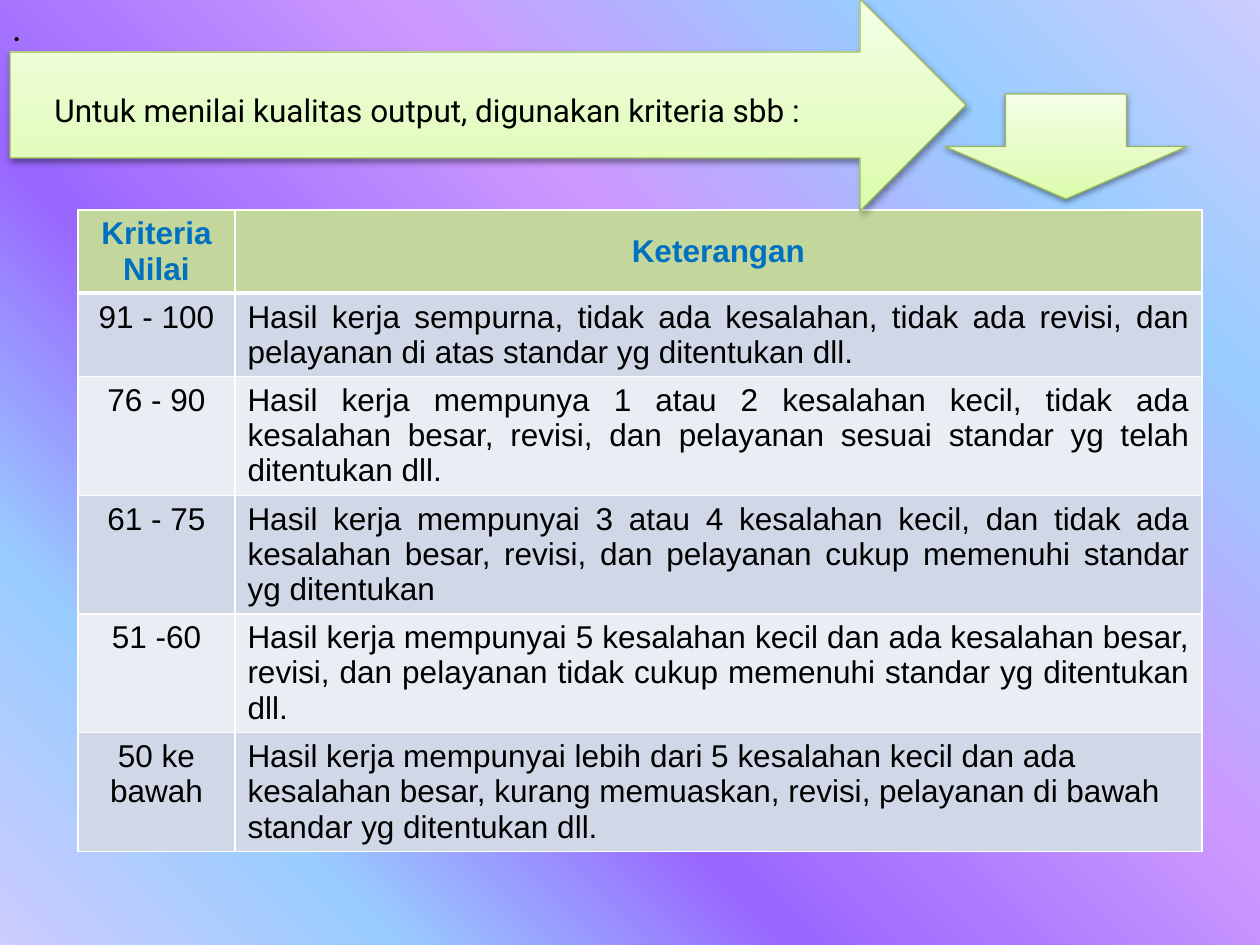
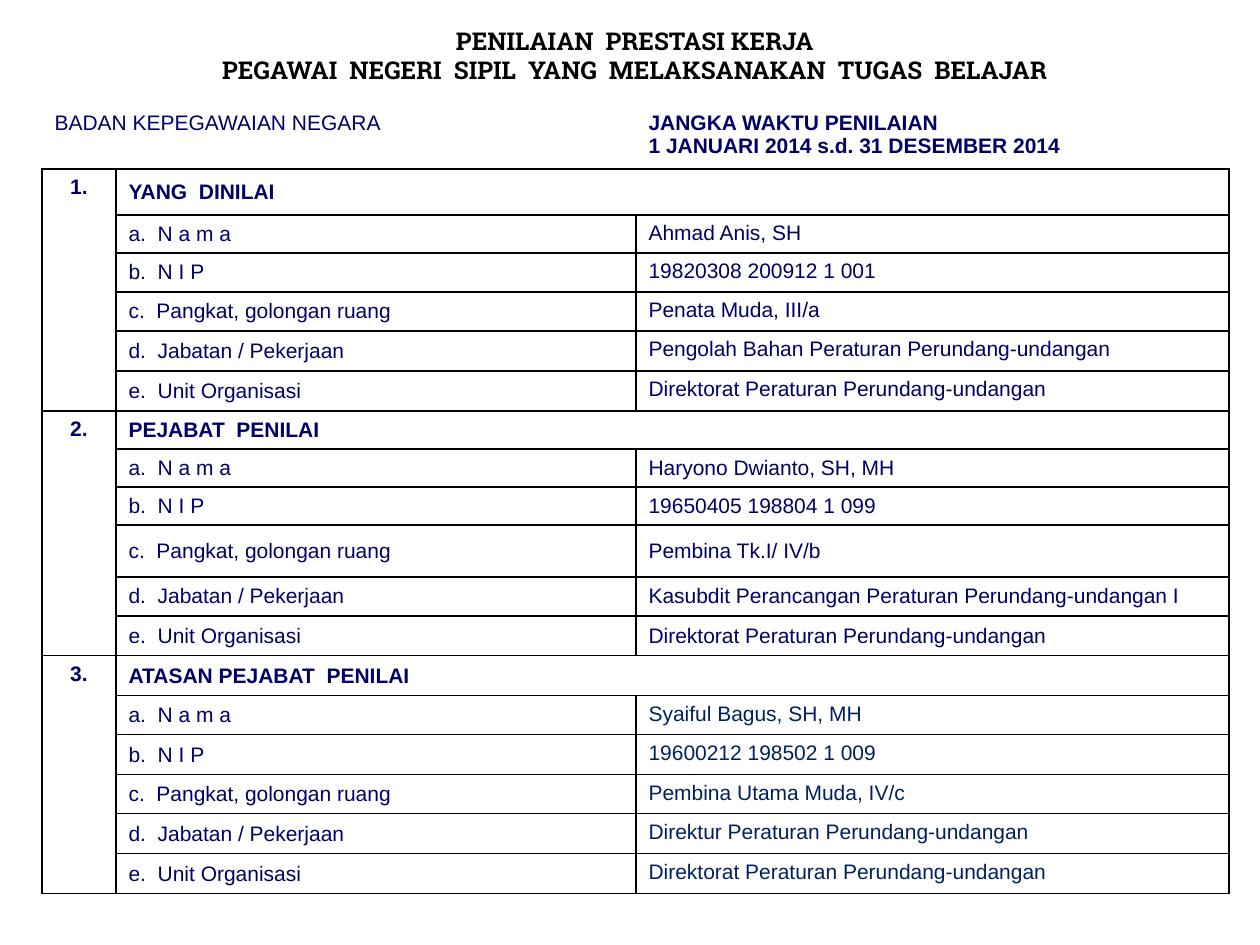
"""Build two slides on civil servant appraisal: quality criteria and an assessment form."""
from lxml import etree
from pptx import Presentation
from pptx.dml.color import RGBColor
from pptx.enum.shapes import MSO_SHAPE
from pptx.enum.text import MSO_ANCHOR, PP_ALIGN
from pptx.oxml.ns import qn
from pptx.util import Emu, Pt

LEFT, CENTER, JUSTIFY = PP_ALIGN.LEFT, PP_ALIGN.CENTER, PP_ALIGN.JUSTIFY
TOP, MIDDLE = MSO_ANCHOR.TOP, MSO_ANCHOR.MIDDLE
RECTANGLE = MSO_SHAPE.RECTANGLE
RIGHT_ARROW, DOWN_ARROW = MSO_SHAPE.RIGHT_ARROW, MSO_SHAPE.DOWN_ARROW

PX = 914400 / 126
BLACK, WHITE, NAVY, DARK_NAVY, BLUE = "000000", "FFFFFF", "000066", "002060", "0070C0"
HEADER_GREEN, ARROW_EDGE = "C3D69B", "98B955"
BANDS = ("D0D8E8", "E9EDF4")
BACKDROP = [(0, "CCCCFF"), (18, "99CCFF"), (36, "9966FF"),
            (61, "CC99FF"), (82, "99CCFF"), (100, "CCCCFF")]
ARROW_GREEN = [(0, "DAFDA7"), (35, "E4FCC2"), (100, "F5FFE7")]
PLAIN_TABLE = "{2D5ABB26-0587-4C30-8999-92F81FD0307C}"

PROMPT = "Untuk menilai kualitas output, digunakan kriteria sbb :"
ARROWS = [(RIGHT_ARROW, (10, -1, 956, 212)), (DOWN_ARROW, (945, 94, 242, 105))]
CRITERIA_HEADS = ("Kriteria Nilai", "Keterangan")
CRITERIA = [
    ("91 - 100", "Hasil kerja sempurna, tidak ada kesalahan, tidak ada revisi, dan "
     "pelayanan di atas standar yg ditentukan dll."),
    ("76 - 90", "Hasil kerja mempunya 1 atau 2 kesalahan kecil, tidak ada kesalahan besar, "
     "revisi, dan pelayanan sesuai standar yg telah ditentukan dll."),
    ("61 - 75", "Hasil kerja mempunyai 3 atau 4 kesalahan kecil, dan tidak ada kesalahan "
     "besar, revisi, dan pelayanan cukup memenuhi standar yg ditentukan"),
    ("51 -60", "Hasil kerja mempunyai 5 kesalahan kecil dan ada kesalahan besar, revisi, "
     "dan pelayanan tidak cukup memenuhi standar yg ditentukan dll."),
    ("50 ke bawah", "Hasil kerja mempunyai lebih dari 5 kesalahan kecil dan ada kesalahan "
     "besar, kurang memuaskan, revisi, pelayanan di bawah standar yg ditentukan dll."),
]
CRITERIA_COLUMNS = (157, 967)
CRITERIA_ROWS = (83, 83, 119, 118, 119, 119)

FORM_TITLE = ["PENILAIAN  PRESTASI KERJA",
              "PEGAWAI  NEGERI  SIPIL  YANG  MELAKSANAKAN  TUGAS  BELAJAR"]
AGENCY = "BADAN KEPEGAWAIAN NEGARA"
PERIOD = ["JANGKA WAKTU PENILAIAN", "1 JANUARI 2014 s.d. 31 DESEMBER 2014"]
FIELDS = ("N a m a", "N I P", "Pangkat, golongan ruang", "Jabatan / Pekerjaan",
          "Unit Organisasi")
SECTIONS = [
    ("YANG  DINILAI", dict(anchor=TOP, before=2.4, color=NAVY),
     ("Ahmad Anis, SH", "19820308 200912 1 001", "Penata Muda, III/a",
      "Pengolah Bahan Peraturan Perundang-undangan",
      "Direktorat Peraturan Perundang-undangan")),
    ("PEJABAT  PENILAI", dict(anchor=MIDDLE, color=NAVY),
     ("Haryono Dwianto, SH, MH", "19650405 198804 1 099", "Pembina Tk.I/ IV/b",
      "Kasubdit Perancangan Peraturan Perundang-undangan I",
      "Direktorat Peraturan Perundang-undangan")),
    ("ATASAN PEJABAT  PENILAI", dict(anchor=TOP, color=DARK_NAVY),
     ("Syaiful Bagus, SH, MH", "19600212 198502 1 009", "Pembina Utama Muda, IV/c",
      "Direktur Peraturan Perundang-undangan",
      "Direktorat Peraturan Perundang-undangan")),
]
FORM_COLUMNS = (74, 520, 593)
FORM_ROWS = (64, 46, 38, 39, 39, 40, 40, 38, 37, 38, 52, 39, 40, 40, 39, 40, 39, 40, 40)


def px(length):
    return Emu(round(length * PX))


def rgb(value):
    return RGBColor.from_string(value)


def write(frame, lines, size, color, font="Arial", bold=False, align=LEFT, before=0):
    frame.text = "\n".join(lines)
    for paragraph in frame.paragraphs:
        paragraph.alignment = align
        paragraph.space_before = Pt(before)
        paragraph.font.name = font
        paragraph.font.size = Pt(size)
        paragraph.font.bold = bold
        paragraph.font.color.rgb = rgb(color)


def add_label(slide, box, lines, size, font, **style):
    frame = slide.shapes.add_textbox(*map(px, box)).text_frame
    frame.word_wrap = True
    frame.vertical_anchor = MIDDLE
    write(frame, lines, size, BLACK, font, **style)


def add_gradient_shape(slide, preset, box, stops, angle):
    shape = slide.shapes.add_shape(preset, *map(px, box))
    shape.shadow.inherit = False
    shape.line.fill.background()
    gradient = etree.Element(qn("a:gradFill"), rotWithShape="1")
    stop_list = etree.SubElement(gradient, qn("a:gsLst"))
    for position, color in stops:
        stop = etree.SubElement(stop_list, qn("a:gs"), pos=str(position * 1000))
        etree.SubElement(stop, qn("a:srgbClr"), val=color)
    etree.SubElement(gradient, qn("a:lin"), ang=str(angle * 60000), scaled="1")
    shape._element.spPr.find(qn("a:prstGeom")).addnext(gradient)
    return shape


def add_arrow(slide, preset, box):
    arrow = add_gradient_shape(slide, preset, box, ARROW_GREEN, 270)
    arrow.line.color.rgb = rgb(ARROW_EDGE)
    arrow.line.width = Pt(0.75)
    effects = arrow._element.spPr.find(qn("a:effectLst"))
    shadow = etree.SubElement(effects, qn("a:outerShdw"), blurRad="40000", dist="20000",
                              dir="5400000", rotWithShape="0")
    tint = etree.SubElement(shadow, qn("a:srgbClr"), val=BLACK)
    etree.SubElement(tint, qn("a:alpha"), val="38000")


def add_plain_table(slide, left, top, columns, rows):
    table = slide.shapes.add_table(len(rows), len(columns), px(left), px(top),
                                   px(sum(columns)), px(sum(rows))).table
    table.first_row = table.horz_banding = False
    table._tbl.tblPr.find(qn("a:tableStyleId")).text = PLAIN_TABLE
    for column, width in zip(table.columns, columns):
        column.width = px(width)
    for row, height in zip(table.rows, rows):
        row.height = px(height)
    return table


def set_borders(cell, color, **widths):
    properties = cell._tc.get_or_add_tcPr()
    for side, width in widths.items():
        line = etree.SubElement(properties, qn(f"a:ln{side}"), w=str(Pt(width)))
        fill = etree.SubElement(line, qn("a:solidFill"))
        etree.SubElement(fill, qn("a:srgbClr"), val=color)


def fill_cell(cell, lines, size, color, anchor=TOP, **style):
    cell.vertical_anchor = anchor
    write(cell.text_frame, lines, size, color, **style)


def build_criteria(slide):
    backdrop = add_gradient_shape(slide, RECTANGLE, (0, 0, 1260, 945), BACKDROP, 315)
    backdrop.text_frame.vertical_anchor = TOP
    write(backdrop.text_frame, ["."], 20, BLACK, "Calibri", before=4)

    table = add_plain_table(slide, 78, 210, CRITERIA_COLUMNS, CRITERIA_ROWS)
    for r, texts in enumerate([CRITERIA_HEADS] + CRITERIA):
        header, last = r == 0, r == len(CRITERIA)
        for c, text in enumerate(texts):
            cell = table.cell(r, c)
            set_borders(cell, WHITE, L=1, R=1, T=3 if r == 1 else 1, B=3 if header else 1)
            cell.fill.solid()
            cell.fill.fore_color.rgb = rgb(HEADER_GREEN if header else BANDS[(r - 1) % 2])
            body_align = LEFT if last else JUSTIFY
            fill_cell(cell, [text], 18, BLUE if header else BLACK, bold=header,
                      anchor=MIDDLE if header and c else TOP,
                      align=CENTER if header or c == 0 else body_align)

    (pointer, pointer_box), (down, down_box) = ARROWS
    add_arrow(slide, pointer, pointer_box)
    add_label(slide, (42, 84, 788, 51), [PROMPT], 18, "Roboto")
    add_arrow(slide, down, down_box)


def build_form(slide):
    add_label(slide, (147, 19, 976, 72), FORM_TITLE, 14, "Roboto Slab", bold=True, align=CENTER)
    table = add_plain_table(slide, 42, 105, FORM_COLUMNS, FORM_ROWS)
    for r in range(len(FORM_ROWS)):
        sides = dict(L=1, R=1, T=1, B=1) if r else dict(B=1)
        for c in range(len(FORM_COLUMNS)):
            set_borders(table.cell(r, c), BLACK, **sides)
            table.cell(r, c).fill.background()

    table.cell(0, 0).merge(table.cell(0, 1))
    fill_cell(table.cell(0, 0), [AGENCY], 12, NAVY)
    fill_cell(table.cell(0, 2), PERIOD, 12, NAVY, bold=True)
    for s, (heading, value_style, values) in enumerate(SECTIONS):
        first = 1 + s * (1 + len(FIELDS))
        table.cell(first, 0).merge(table.cell(first + len(FIELDS), 0))
        table.cell(first, 1).merge(table.cell(first, 2))
        fill_cell(table.cell(first, 0), [f"{s + 1}."], 12, NAVY, bold=True, align=CENTER)
        fill_cell(table.cell(first, 1), [heading], 12, NAVY, MIDDLE, bold=True)
        for f, (field, value) in enumerate(zip(FIELDS, values)):
            row = first + 1 + f
            fill_cell(table.cell(row, 1), [f"{'abcde'[f]}.  {field}"], 12, NAVY, MIDDLE)
            fill_cell(table.cell(row, 2), [value], 12, **value_style)


def main():
    deck = Presentation()
    deck.slide_width, deck.slide_height = px(1260), px(945)
    for build in (build_criteria, build_form):
        build(deck.slides.add_slide(deck.slide_layouts[6]))
    deck.save("out.pptx")


if __name__ == "__main__":
    main()
